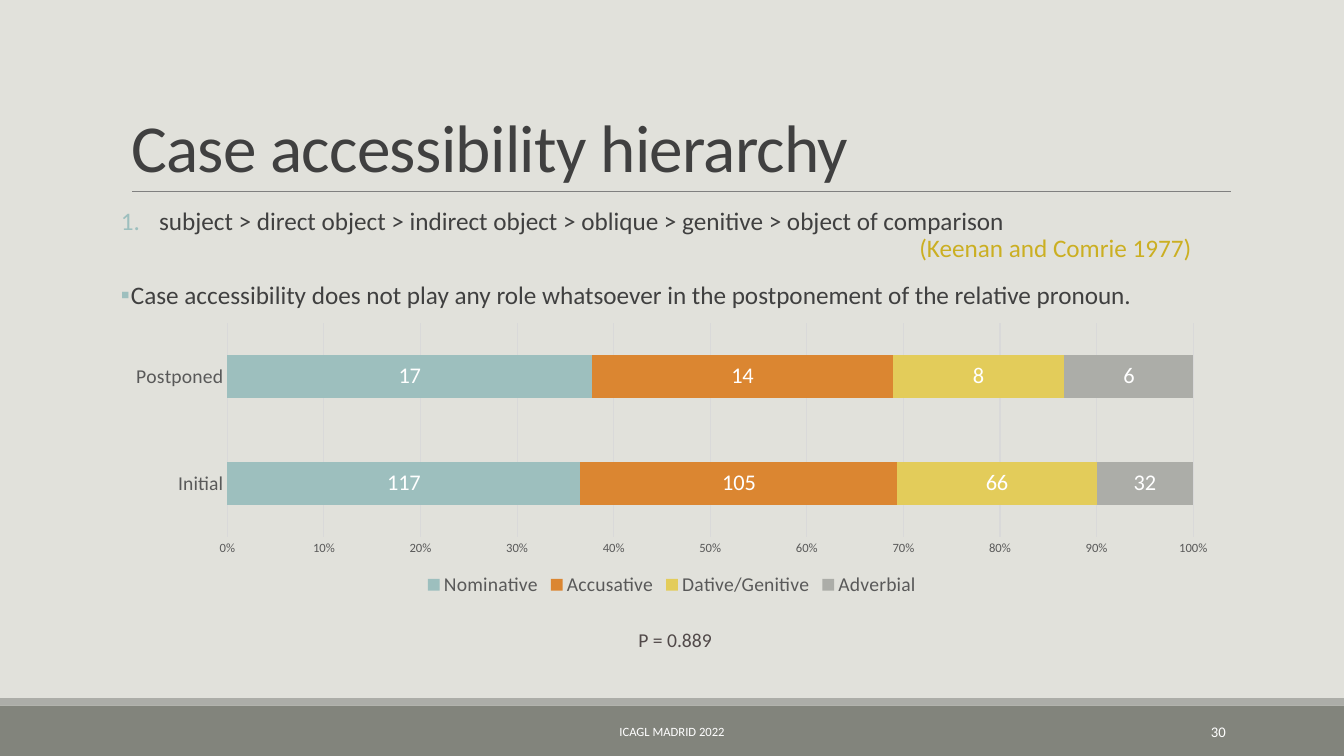
from lxml import etree
from pptx import Presentation, util as u
from pptx.chart.data import CategoryChartData
from pptx.dml.color import RGBColor
from pptx.enum import chart as ch, shapes, text
from pptx.oxml.ns import qn

BACK = RGBColor(0xE1, 0xE1, 0xDB)
BAND = RGBColor(0x82, 0x84, 0x7C)
GREY = RGBColor(0xAC, 0xAD, 0xA8)
RULE = RGBColor(0x80, 0x80, 0x80)
DARK = RGBColor(0x40, 0x40, 0x40)
NOTE = RGBColor(0x51, 0x49, 0x49)
AXIS = RGBColor(0x59, 0x59, 0x59)
GRID = RGBColor(0xD9, 0xD9, 0xD9)
GOLD = RGBColor(0xCB, 0xAF, 0x22)
TEAL = RGBColor(0x9D, 0xBF, 0xBE)
RUST = RGBColor(0xDB, 0x86, 0x31)
SAND = RGBColor(0xE3, 0xCC, 0x5A)
WHITE = RGBColor(0xFF, 0xFF, 0xFF)

FONT = "Calibri"
WIDE, HIGH = 33.87, 19.05
LEFT, MID = text.PP_ALIGN.LEFT, text.PP_ALIGN.CENTER
CASES = {
    "Nominative": (TEAL, (117, 17)),
    "Accusative": (RUST, (105, 14)),
    "Dative/Genitive": (SAND, (66, 8)),
    "Adverbial": (GREY, (32, 6)),
}


def cms(*box):
    return [u.Cm(n) for n in box]


def set_all(obj, **vals):
    for key, val in vals.items():
        setattr(obj, key, val)


def style(font, size, color):
    set_all(font, name=FONT, size=u.Pt(size), bold=False)
    font.color.rgb = color


def add_run(para, words, size, color):
    run = para.add_run()
    run.text = words
    style(run.font, size, color)
    return run


def add_node(parent, tag, **attrs):
    return etree.SubElement(parent, qn(tag), attrs)


def add_text(slide, box, words, size, color, align, anchor=text.MSO_ANCHOR.MIDDLE):
    frame = slide.shapes.add_textbox(*cms(*box)).text_frame
    set_all(frame, word_wrap=True, vertical_anchor=anchor)
    para = frame.paragraphs[0]
    para.alignment = align
    add_run(para, words, size, color)


def add_title(slide, box, words):
    title = slide.shapes.title
    set_all(title, **dict(zip(("left", "top", "width", "height"), cms(*box))))
    frame = title.text_frame
    set_all(frame, word_wrap=True, vertical_anchor=text.MSO_ANCHOR.BOTTOM,
            auto_size=text.MSO_AUTO_SIZE.NONE)
    para = frame.paragraphs[0]
    set_all(para, alignment=LEFT, line_spacing=0.85)
    run = add_run(para, words, 48, DARK)
    run.font._element.set("spc", "-50")

    x, y, w, h = box
    rule = slide.shapes.add_connector(
        shapes.MSO_CONNECTOR.STRAIGHT, *cms(x + 0.28, y + h, x + w + 0.02, y + h))
    rule.line.color.rgb = RULE
    rule.line.width = u.Pt(0.5)
    add_node(rule._element.spPr, "a:effectLst")


def set_item(para, hang, tag, **mark):
    """Space a list paragraph and give it a hanging teal bullet."""
    set_all(para, alignment=LEFT, line_spacing=0.9,
            space_before=u.Pt(12), space_after=u.Pt(2))
    props = para._p.get_or_add_pPr()
    props.set("marL", str(u.Cm(hang)))
    props.set("indent", str(-u.Cm(hang)))
    add_node(add_node(props, "a:buClr"), "a:srgbClr", val=str(TEAL))
    add_node(props, "a:buFont", typeface=FONT)
    add_node(props, tag, **mark)
    return props


def add_body(slide, box):
    frame = slide.shapes.add_textbox(*cms(*box)).text_frame
    set_all(frame, word_wrap=True, margin_left=0, margin_right=0)
    first, last = frame.paragraphs[0], frame.add_paragraph()

    props = set_item(first, 0.96, "a:buAutoNum", type="arabicPeriod")
    add_node(add_node(props, "a:tabLst"), "a:tab", pos=str(u.Cm(27.91)), algn="r")
    add_run(first, "subject > direct object > indirect object > oblique > "
            "genitive > object of comparison", 18, DARK)
    first.add_line_break()
    add_run(first, "\t", 18, DARK)
    add_run(first, "(Keenan and Comrie 1977)", 18, GOLD)

    set_item(last, 0.25, "a:buChar", char="▪")
    add_run(last, "Case accessibility does not play any role whatsoever in the "
            "postponement of the relative pronoun.", 18, DARK)


def add_bars(slide, box):
    data = CategoryChartData()
    data.categories = ["Initial", "Postponed"]
    for name, (_, vals) in CASES.items():
        data.add_series(name, vals)
    chart = slide.shapes.add_chart(
        ch.XL_CHART_TYPE.BAR_STACKED_100, *cms(*box), data).chart
    set_all(chart, has_title=False, has_legend=True)
    style(chart.font, 10, AXIS)
    set_all(chart.legend, position=ch.XL_LEGEND_POSITION.BOTTOM, include_in_layout=False)
    style(chart.legend.font, 14, AXIS)

    cat, val = chart.category_axis, chart.value_axis
    for axis, size in ((cat, 14), (val, 9)):
        set_all(axis, major_tick_mark=ch.XL_TICK_MARK.NONE,
                minor_tick_mark=ch.XL_TICK_MARK.NONE)
        style(axis.tick_labels.font, size, AXIS)
    val.has_major_gridlines = True
    set_all(val.tick_labels, number_format="0%", number_format_is_linked=False)
    val.format.line.fill.background()
    for line in (cat.format.line, val.major_gridlines.format.line):
        line.color.rgb = GRID
        line.width = u.Pt(0.75)

    plot = chart.plots[0]
    set_all(plot, gap_width=150, overlap=100, vary_by_categories=False)
    for bar in plot.series:
        bar.format.fill.solid()
        bar.format.fill.fore_color.rgb = CASES[bar.name][0]
        tags = bar.data_labels
        set_all(tags, show_value=True, position=ch.XL_LABEL_POSITION.CENTER)
        style(tags.font, 16, WHITE)


def add_foot(slide, top):
    for y, h, color in ((top, HIGH - top, BAND), (top - 0.19, 0.19, GREY)):
        band = slide.shapes.add_shape(shapes.MSO_SHAPE.RECTANGLE, *cms(0, y, WIDE, h))
        band.shadow.inherit = False
        band.fill.solid()
        band.fill.fore_color.rgb = color
        band.line.fill.background()
    y = top + 0.15
    add_text(slide, (10.24, y, 13.39, 1.02), "ICAGL MADRID 2022", 9, WHITE, MID)
    add_text(slide, (27.51, y, 3.63, 1.02), "30", 10.5, WHITE, text.PP_ALIGN.RIGHT)


def main():
    deck = Presentation()
    set_all(deck, slide_width=u.Cm(WIDE), slide_height=u.Cm(HIGH))
    slide = deck.slides.add_slide(deck.slide_layouts[5])
    slide.background.fill.solid()
    slide.background.fill.fore_color.rgb = BACK
    add_foot(slide, 17.78)
    add_title(slide, (3.05, 0.79, 27.94, 4.04), "Case accessibility hierarchy")
    add_body(slide, (3.05, 5.13, 27.94, 2.87))
    add_bars(slide, (2.87, 8, 28.12, 7.14))
    add_text(slide, (10.31, 15.7, 13.41, 0.86), "P = 0.889", 14, NOTE, MID,
             text.MSO_ANCHOR.TOP)
    deck.save("out.pptx")


if __name__ == "__main__":
    main()
